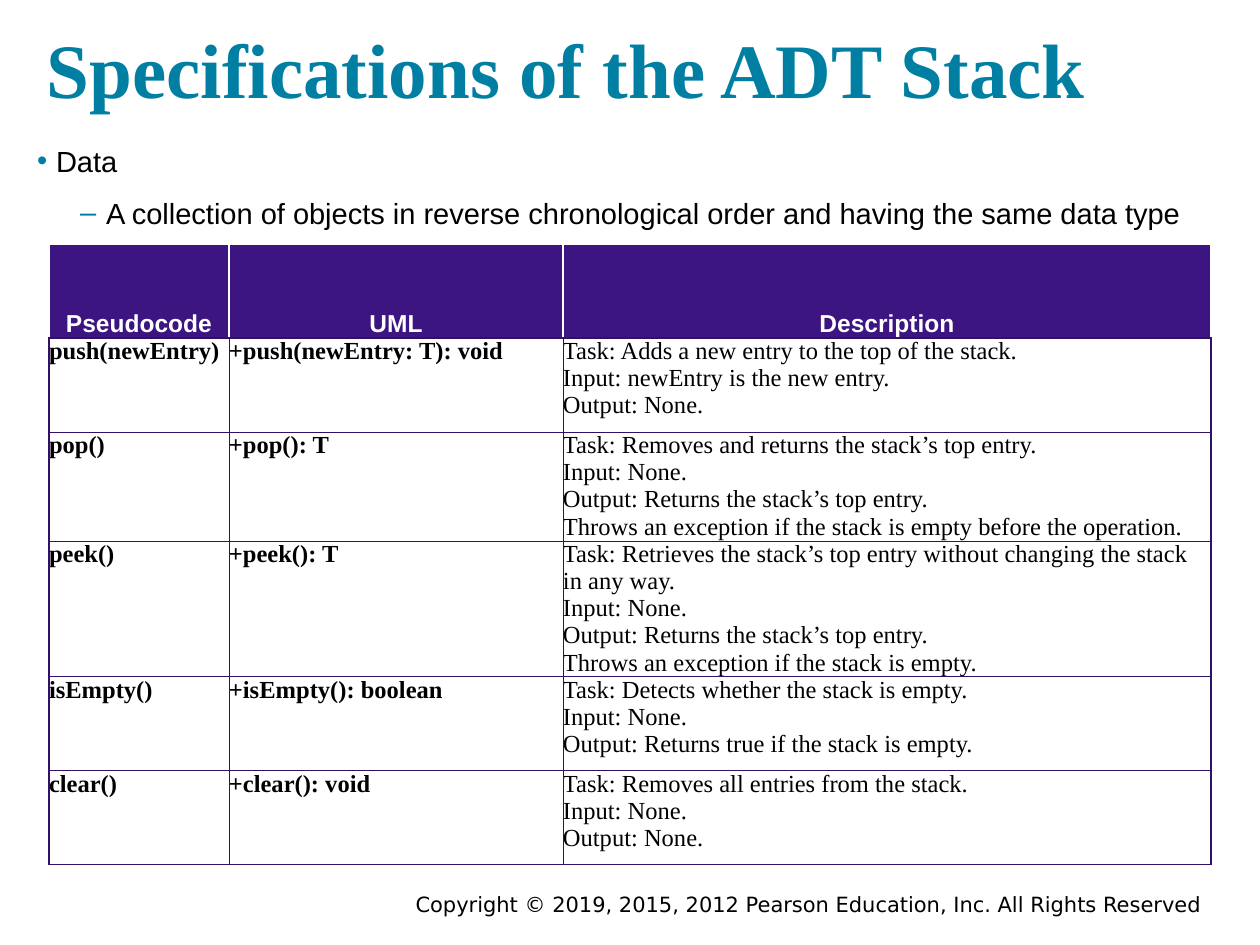
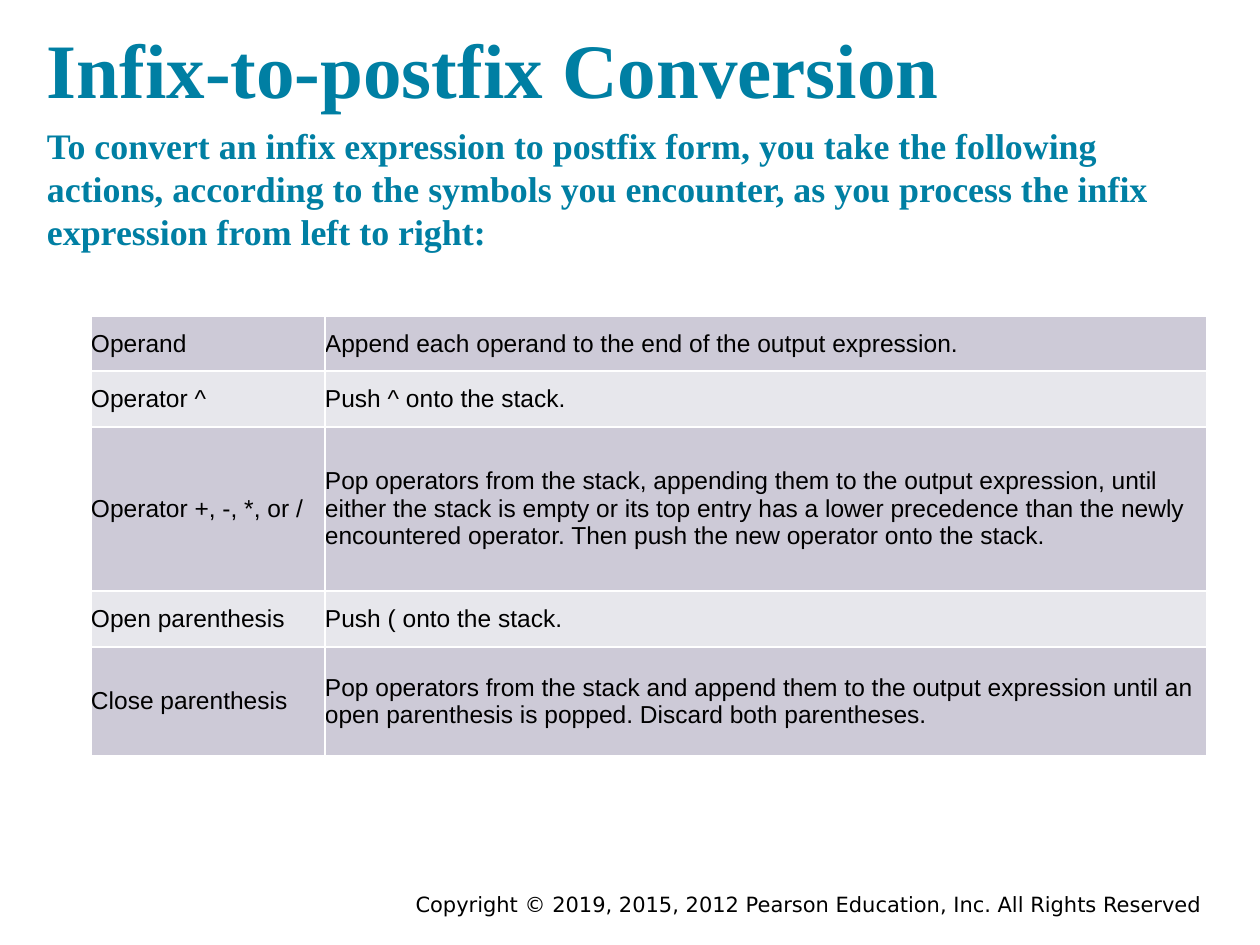
from copy import deepcopy
from dataclasses import dataclass

from lxml.etree import SubElement
from pptx import Presentation
from pptx.dml.color import RGBColor
from pptx.enum.text import MSO_ANCHOR as Anchor, MSO_AUTO_SIZE as AutoSize, PP_ALIGN as Align
from pptx.oxml.ns import qn
from pptx.util import Emu, Pt

PX_PER_INCH = 126
TITLE_AND_BODY = 1


@dataclass(frozen=True)
class Theme:
    teal: str = "007FA3"
    purple: str = "3C1581"
    rule: str = "301167"
    band_dark: str = "CDCAD7"
    band_light: str = "E7E7EC"
    black: str = "000000"
    white: str = "FFFFFF"
    serif: str = "Times New Roman"
    sans: str = "Arial"
    footer_font: str = "DejaVu Sans"
    title_size: float = 44
    lead_size: float = 20.5
    list_size: float = 16.6
    table_size: float = 14
    footer_size: float = 12
    thick: float = 1
    thin: float = 0.25


THEME = Theme()

TITLE_BOX = (34, 11, 1173, 116)
FOOTER_BOX = (221, 886, 987, 39)
COPYRIGHT = "Copyright © 2019, 2015, 2012 Pearson Education, Inc. All Rights Reserved"

OPERATION_HEADINGS = ("Pseudocode", "UML", "Description")
OPERATIONS = (
    ("push(newEntry)", "+push(newEntry: T): void",
     "Task: Adds a new entry to the top of the stack.\n"
     "Input: newEntry is the new entry.\nOutput: None."),
    ("pop()", "+pop(): T",
     "Task: Removes and returns the stack’s top entry.\nInput: None.\n"
     "Output: Returns the stack’s top entry.\n"
     "Throws an exception if the stack is empty before the operation."),
    ("peek()", "+peek(): T",
     "Task: Retrieves the stack’s top entry without changing the stack in any way.\n"
     "Input: None.\nOutput: Returns the stack’s top entry.\n"
     "Throws an exception if the stack is empty."),
    ("isEmpty()", "+isEmpty(): boolean",
     "Task: Detects whether the stack is empty.\nInput: None.\n"
     "Output: Returns true if the stack is empty."),
    ("clear()", "+clear(): void",
     "Task: Removes all entries from the stack.\nInput: None.\nOutput: None."),
)
CONVERSION_RULES = (
    ("Operand", "Append each operand to the end of the output expression."),
    ("Operator ^", "Push ^ onto the stack."),
    ("Operator +, -, *, or /",
     "Pop operators from the stack, appending them to the output expression, until "
     "either the stack is empty or its top entry has a lower precedence than the newly "
     "encountered operator. Then push the new operator onto the stack."),
    ("Open parenthesis", "Push ( onto the stack."),
    ("Close parenthesis",
     "Pop operators from the stack and append them to the output expression until an "
     "open parenthesis is popped. Discard both parentheses."),
)


def px(length):
    return Emu(round(length * 914400 / PX_PER_INCH))


def write(paragraph, text, *, size, font=THEME.sans, color=THEME.black, bold=False,
          align=Align.LEFT, before=0, bullet=None, margin=0, indent=0):
    """Fill a paragraph; newlines in the text become line breaks."""
    paragraph.text = text
    paragraph.alignment = align
    paragraph.space_before = Pt(before)
    properties = paragraph._p.get_or_add_pPr()
    properties.set("marL", str(px(margin)))
    properties.set("indent", str(px(indent)))
    if bullet:
        bullet_color = SubElement(properties, qn("a:buClr"))
        SubElement(bullet_color, qn("a:srgbClr"), val=THEME.teal)
        SubElement(properties, qn("a:buChar"), char=bullet)
    else:
        SubElement(properties, qn("a:buNone"))
    for run in paragraph.runs:
        run.font.size = Pt(size)
        run.font.name = font
        run.font.bold = bold
        run.font.color.rgb = RGBColor.from_string(color)
    for line_break in paragraph._p.findall(qn("a:br")):
        line_break.insert(0, deepcopy(paragraph.runs[0]._r.rPr))


def prepare_frame(shape, box, anchor=Anchor.TOP, inset=13):
    """Place a text shape and return its emptied-out text frame settings."""
    shape.left, shape.top, shape.width, shape.height = map(px, box)
    frame = shape.text_frame
    frame.word_wrap = True
    frame.auto_size = AutoSize.NONE
    frame.vertical_anchor = anchor
    frame.margin_left = frame.margin_right = px(inset)
    frame.margin_top = frame.margin_bottom = px(inset)
    return frame


def add_titled_slide(presentation, title):
    """Add a slide with the shared title and footer."""
    slide = presentation.slides.add_slide(presentation.slide_layouts[TITLE_AND_BODY])
    frame = prepare_frame(slide.shapes.title, TITLE_BOX, Anchor.BOTTOM)
    write(frame.paragraphs[0], title, size=THEME.title_size, font=THEME.serif,
          color=THEME.teal, bold=True)
    footer = slide.shapes.add_textbox(*map(px, FOOTER_BOX))
    frame = prepare_frame(footer, FOOTER_BOX, inset=6)
    write(frame.paragraphs[0], COPYRIGHT, size=THEME.footer_size,
          font=THEME.footer_font, align=Align.RIGHT)
    return slide


def add_plain_table(slide, left, top, columns, rows):
    shape = slide.shapes.add_table(len(rows), len(columns), px(left), px(top),
                                   px(sum(columns)), px(sum(rows)))
    table = shape.table
    table.first_row = table.horz_banding = False
    for column, width in zip(table.columns, columns):
        column.width = px(width)
    for row, height in zip(table.rows, rows):
        row.height = px(height)
    return table


def fill_cell(cell, text, borders, fill=None, anchor=Anchor.TOP, **text_format):
    """Set a cell's text, fill and (colour, width) borders for L, R, T and B."""
    cell.margin_left = cell.margin_right = cell.margin_top = cell.margin_bottom = 0
    cell.vertical_anchor = anchor
    properties = cell._tc.get_or_add_tcPr()
    for side, (color, width) in borders.items():
        line = SubElement(properties, qn(f"a:ln{side}"), w=str(Pt(width)))
        line_fill = SubElement(line, qn("a:solidFill"))
        SubElement(line_fill, qn("a:srgbClr"), val=color)
    if fill:
        cell.fill.solid()
        cell.fill.fore_color.rgb = RGBColor.from_string(fill)
    else:
        cell.fill.background()
    write(cell.text_frame.paragraphs[0], text, size=THEME.table_size, **text_format)


def add_operations_table(slide, left, top):
    table = add_plain_table(slide, left, top, (180, 334, 648), (94, 94, 109, 135, 94, 94))
    white, thick, thin = ((THEME.white, THEME.thick), (THEME.rule, THEME.thick),
                          (THEME.rule, THEME.thin))
    for column, heading in enumerate(OPERATION_HEADINGS):
        fill_cell(table.cell(0, column), heading,
                  {"L": white, "R": white, "T": white, "B": thick},
                  fill=THEME.purple, anchor=Anchor.BOTTOM, color=THEME.white,
                  bold=True, align=Align.CENTER)
    last_column = len(OPERATION_HEADINGS) - 1
    for row, operation in enumerate(OPERATIONS, start=1):
        for column, text in enumerate(operation):
            borders = {
                "L": thick if column == 0 else thin,
                "R": thick if column == last_column else thin,
                "T": thick if row == 1 else thin,
                "B": thick if row == len(OPERATIONS) else thin,
            }
            fill_cell(table.cell(row, column), text, borders, font=THEME.serif,
                      bold=column < last_column)


def add_rules_table(slide, left, top):
    table = add_plain_table(slide, left, top, (234, 882), (55, 56, 164, 56, 109))
    borders = dict.fromkeys("LRTB", (THEME.white, THEME.thick))
    for row, rule in enumerate(CONVERSION_RULES):
        band = THEME.band_light if row % 2 else THEME.band_dark
        for column, text in enumerate(rule):
            fill_cell(table.cell(row, column), text, borders, fill=band,
                      anchor=Anchor.MIDDLE)


def build_specifications_slide(presentation):
    slide = add_titled_slide(presentation, "Specifications of the ADT Stack")
    add_operations_table(slide, 49, 244)
    frame = prepare_frame(slide.placeholders[1], (14, 130, 1215, 113))
    write(frame.paragraphs[0], "Data", size=THEME.list_size, bullet="•",
          margin=29, indent=-19)
    detail = frame.add_paragraph()
    detail.level = 1
    write(detail, "A collection of objects in reverse chronological order and having "
          "the same data type", size=THEME.list_size, bullet="–", before=10,
          margin=79, indent=-26)


def build_conversion_slide(presentation):
    slide = add_titled_slide(presentation, "Infix-to-postfix Conversion")
    frame = prepare_frame(slide.placeholders[1], (34, 115, 1134, 151), Anchor.BOTTOM)
    write(frame.paragraphs[0], "To convert an infix expression to postfix form, you take "
          "the following actions, according to the symbols you encounter, as you process "
          "the infix expression from left to right:", size=THEME.lead_size,
          font=THEME.serif, color=THEME.teal, bold=True)
    add_rules_table(slide, 91, 316)


def main():
    presentation = Presentation()
    presentation.slide_width, presentation.slide_height = px(1260), px(945)
    build_specifications_slide(presentation)
    build_conversion_slide(presentation)
    presentation.save("out.pptx")


if __name__ == "__main__":
    main()
